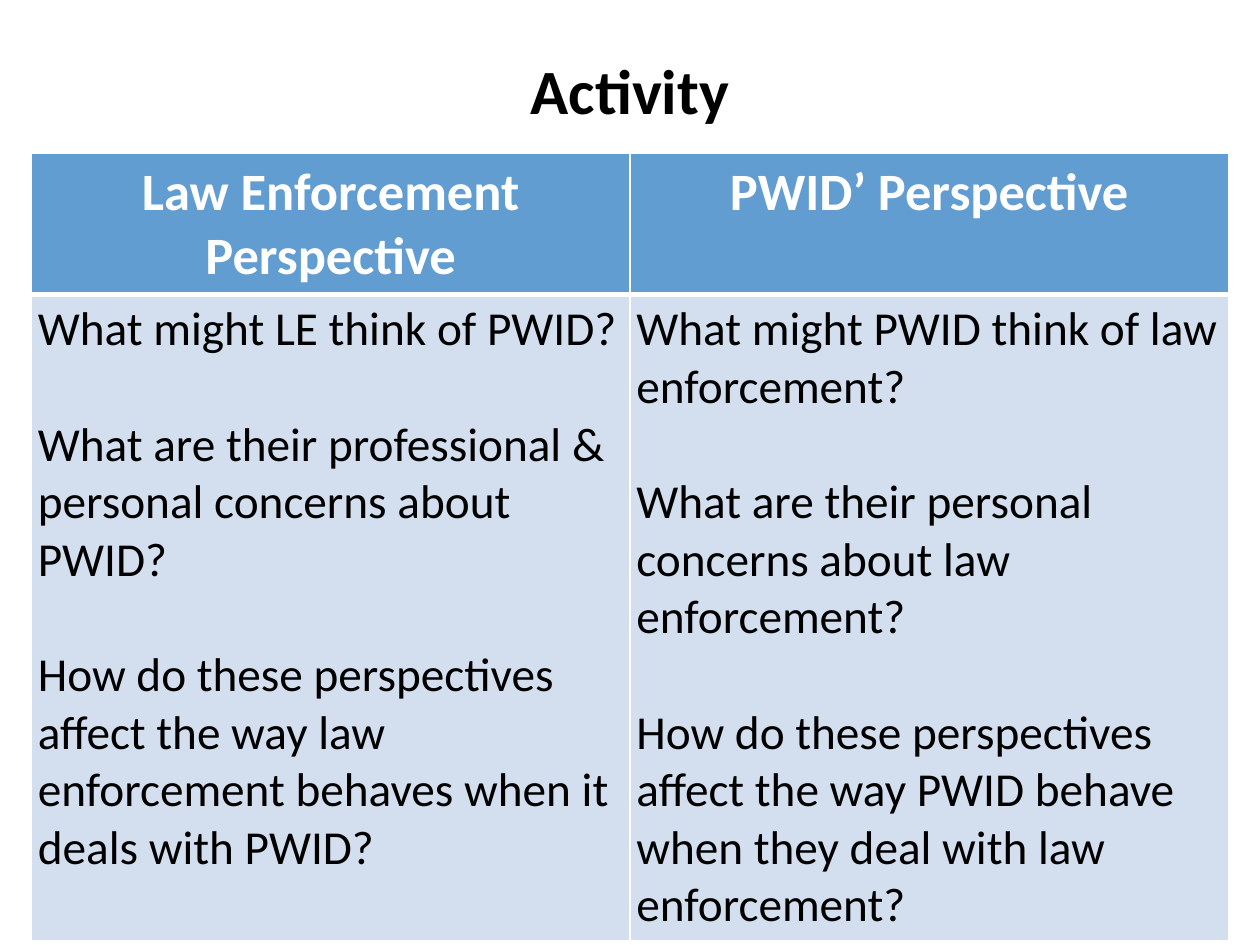
from lxml import etree
from pptx import Presentation
from pptx.dml.color import RGBColor
from pptx.enum.text import MSO_ANCHOR, PP_ALIGN
from pptx.oxml.ns import qn
from pptx.util import Inches, Pt

CENTER, LEFT = PP_ALIGN.CENTER, PP_ALIGN.LEFT
MIDDLE, TOP = MSO_ANCHOR.MIDDLE, MSO_ANCHOR.TOP
FONT = "Calibri"
WHITE, BLACK, HEADER_BLUE, BODY_BLUE = "FFFFFF", "000000", "629DD1", "D3DFEE"
MARGIN = Inches(0.05)
QUESTION_GAP = Pt(33)

COLUMNS = [
    ("Law Enforcement Perspective", [
        "What might LE think of PWID?",
        "What are their professional & personal concerns about PWID?",
        "How do these perspectives affect the way law enforcement behaves "
        "when it deals with PWID?",
    ]),
    ("PWID’ Perspective", [
        "What might PWID think of law enforcement?",
        "What are their personal concerns about law enforcement?",
        "How do these perspectives affect the way PWID behave when they "
        "deal with law enforcement?",
    ]),
]


def color(value):
    return RGBColor.from_string(value)


def set_margins(box):
    box.margin_left = box.margin_right = MARGIN
    box.margin_top = box.margin_bottom = MARGIN


def write_paragraphs(frame, texts, size, ink, bold, align, gap=0):
    for index, text in enumerate(texts):
        para = frame.add_paragraph() if index else frame.paragraphs[0]
        para.alignment = align
        para.space_before = gap if index else Pt(0)
        span = para.add_run()
        span.text = text
        span.font.name = FONT
        span.font.size = Pt(size)
        span.font.bold = bold
        span.font.color.rgb = color(ink)


def set_borders(cell, **widths):
    """Draw white borders; widths are points keyed by L, R, T and B."""
    properties = cell._tc.get_or_add_tcPr()
    for index, (side, width) in enumerate(widths.items()):
        line = etree.Element(qn(f"a:ln{side}"), w=str(Pt(width)))
        fill = etree.SubElement(line, qn("a:solidFill"))
        etree.SubElement(fill, qn("a:srgbClr"), val=WHITE)
        properties.insert(index, line)


def style_cell(cell, fill):
    set_margins(cell)
    cell.vertical_anchor = TOP
    cell.fill.solid()
    cell.fill.fore_color.rgb = color(fill)


def add_title(page, text):
    title = page.shapes.title
    title.left, title.top = Inches(1), Inches(0.32)
    title.width, title.height = Inches(8), Inches(0.77)
    frame = title.text_frame
    frame.vertical_anchor = MIDDLE
    set_margins(frame)
    write_paragraphs(frame, [text], 36, BLACK, True, CENTER)


def add_perspectives(page):
    table = page.shapes.add_table(
        2, len(COLUMNS), Inches(0.25), Inches(1.22), Inches(9.5), Inches(6)
    ).table
    table.rows[0].height, table.rows[1].height = Inches(1.02), Inches(4.98)
    for index, (heading, questions) in enumerate(COLUMNS):
        header, body = table.cell(0, index), table.cell(1, index)
        style_cell(header, HEADER_BLUE)
        set_borders(header, L=1, R=1, T=1, B=3)
        write_paragraphs(header.text_frame, [heading], 30, WHITE, True, CENTER)
        style_cell(body, BODY_BLUE)
        set_borders(body, L=1, R=1, T=3, B=1)
        write_paragraphs(body.text_frame, questions, 27, BLACK, False, LEFT,
                         QUESTION_GAP)


def main():
    deck = Presentation()
    deck.slide_width, deck.slide_height = Inches(10), Inches(7.5)
    page = deck.slides.add_slide(deck.slide_layouts[5])
    add_title(page, "Activity")
    add_perspectives(page)
    deck.save("out.pptx")


if __name__ == "__main__":
    main()
